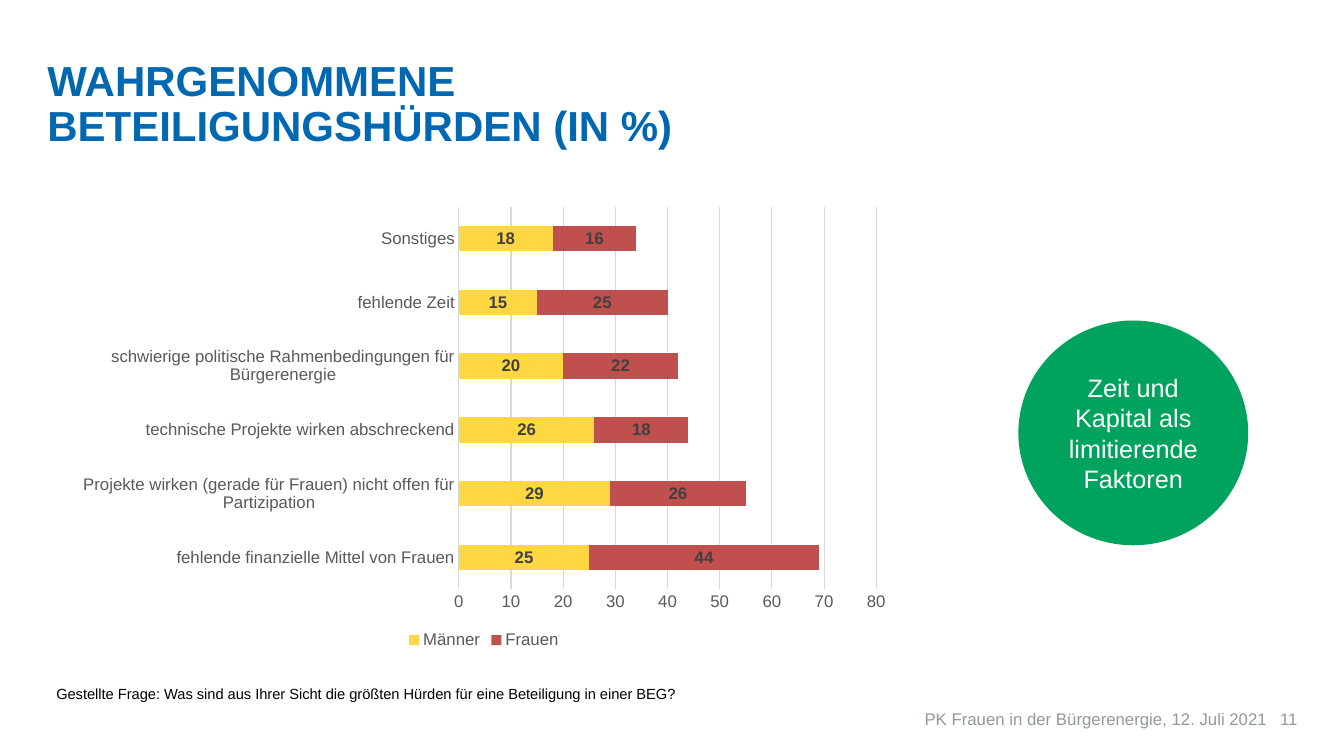
from lxml import etree
from pptx import Presentation
from pptx.chart.data import CategoryChartData
from pptx.dml.color import RGBColor
from pptx.enum.chart import XL_CHART_TYPE as ChartType, XL_LABEL_POSITION as LabelPosition
from pptx.enum.chart import XL_LEGEND_POSITION as LegendPosition, XL_TICK_MARK as TickMark
from pptx.enum.shapes import MSO_SHAPE
from pptx.enum.text import MSO_ANCHOR, MSO_AUTO_SIZE, PP_ALIGN
from pptx.oxml.ns import qn
from pptx.util import Inches, Pt

COLORS = {
    "title": "0067B1", "footer": "92999C", "black": "000000", "white": "FFFFFF",
    "green": "00A35D", "men": "FFD743", "women": "C0504D",
    "axis": "595959", "grid": "D9D9D9", "label": "404040",
}


def style_font(font, size, color, bold=False):
    font.name = "Arial"
    font.size = Pt(size)
    font.bold = bold
    font.color.rgb = RGBColor.from_string(COLORS[color])


def write_text(shape, text, size, color, align=PP_ALIGN.LEFT, bold=False, margin=None):
    frame = shape.text_frame
    frame.text = text
    frame.word_wrap = True
    frame.auto_size = MSO_AUTO_SIZE.NONE
    if margin is not None:
        frame.margin_left = frame.margin_right = Inches(margin)
        frame.margin_top = frame.margin_bottom = Inches(margin)
    para = frame.paragraphs[0]
    para.alignment = align
    style_font(para.runs[0].font, size, color, bold)
    return frame


deck = Presentation()
deck.slide_width, deck.slide_height = Inches(13.33), Inches(7.5)
page = deck.slides.add_slide(deck.slide_layouts[5])

title = page.shapes.title
title.left, title.top = Inches(0.47), Inches(0.62)
title.width, title.height = Inches(8.07), Inches(0.87)
frame = write_text(title, "WAHRGENOMMENE BETEILIGUNGSHÜRDEN (IN %)", 30, "title", bold=True, margin=0)
frame.vertical_anchor = MSO_ANCHOR.BOTTOM
frame.paragraphs[0].line_spacing = Pt(32)

data = CategoryChartData()
data.categories = [
    "fehlende finanzielle Mittel von Frauen",
    "Projekte wirken (gerade für Frauen) nicht offen für Partizipation",
    "technische Projekte wirken abschreckend",
    "schwierige politische Rahmenbedingungen für Bürgerenergie",
    "fehlende Zeit",
    "Sonstiges",
]
data.add_series("Männer", [25, 29, 26, 20, 15, 18])
data.add_series("Frauen", [44, 26, 18, 22, 25, 16])
chart = page.shapes.add_chart(
    ChartType.BAR_STACKED, Inches(0.66), Inches(1.96), Inches(8.28), Inches(4.52), data
).chart
style_font(chart.font, 10, "black")
chart.has_title = False
chart.has_legend = True
chart.legend.position = LegendPosition.BOTTOM
chart.legend.include_in_layout = False
style_font(chart.legend.font, 12, "axis")

plot = chart.plots[0]
plot.gap_width = 150
plot.overlap = 100
plot.vary_by_categories = False
for series, color in zip(plot.series, ["men", "women"]):
    series.format.fill.solid()
    series.format.fill.fore_color.rgb = RGBColor.from_string(COLORS[color])
    labels = series.data_labels
    labels.show_value = True
    labels.position = LabelPosition.CENTER
    style_font(labels.font, 12, "label", bold=True)

for axis in (chart.category_axis, chart.value_axis):
    axis.major_tick_mark = axis.minor_tick_mark = TickMark.NONE
    style_font(axis.tick_labels.font, 12, "axis")
chart.value_axis.minimum_scale = 0
chart.value_axis.maximum_scale = 80
chart.value_axis.major_unit = 10
chart.value_axis.format.line.fill.background()
for line in (chart.category_axis.format.line, chart.value_axis.major_gridlines.format.line):
    line.color.rgb = RGBColor.from_string(COLORS["grid"])
    line.width = Pt(0.75)

plot_area = chart.element.find(".//" + qn("c:plotArea"))
for old_layout in plot_area.findall(qn("c:layout")):
    plot_area.remove(old_layout)
layout = etree.Element(qn("c:layout"))
manual = etree.SubElement(layout, qn("c:manualLayout"))
for tag, value in [("layoutTarget", "inner"), ("xMode", "edge"), ("yMode", "edge"),
                   ("x", "0.47"), ("y", "0.02"), ("w", "0.5"), ("h", "0.84")]:
    etree.SubElement(manual, qn("c:" + tag)).set("val", value)
plot_area.insert(0, layout)

circle = page.shapes.add_shape(MSO_SHAPE.OVAL, Inches(10.1), Inches(3.18), Inches(2.28), Inches(2.23))
circle.shadow.inherit = False
circle.fill.solid()
circle.fill.fore_color.rgb = RGBColor.from_string(COLORS["green"])
circle.line.fill.background()
frame = write_text(circle, "Zeit und Kapital als limitierende Faktoren", 18, "white", PP_ALIGN.CENTER)
frame.vertical_anchor = MSO_ANCHOR.MIDDLE

question = page.shapes.add_textbox(Inches(0.46), Inches(6.74), Inches(8.35), Inches(0.28))
write_text(question, "Gestellte Frage: Was sind aus Ihrer Sicht die größten Hürden für eine "
           "Beteiligung in einer BEG?", 10.5, "black")

for text, left, width in [("PK Frauen in der Bürgerenergie, 12. Juli 2021", 7.28, 5.29), ("11", 12.57, 0.3)]:
    footer = page.shapes.add_textbox(Inches(left), Inches(7.03), Inches(width), Inches(0.2))
    write_text(footer, text, 12, "footer", PP_ALIGN.RIGHT, margin=0)

deck.save("out.pptx")
